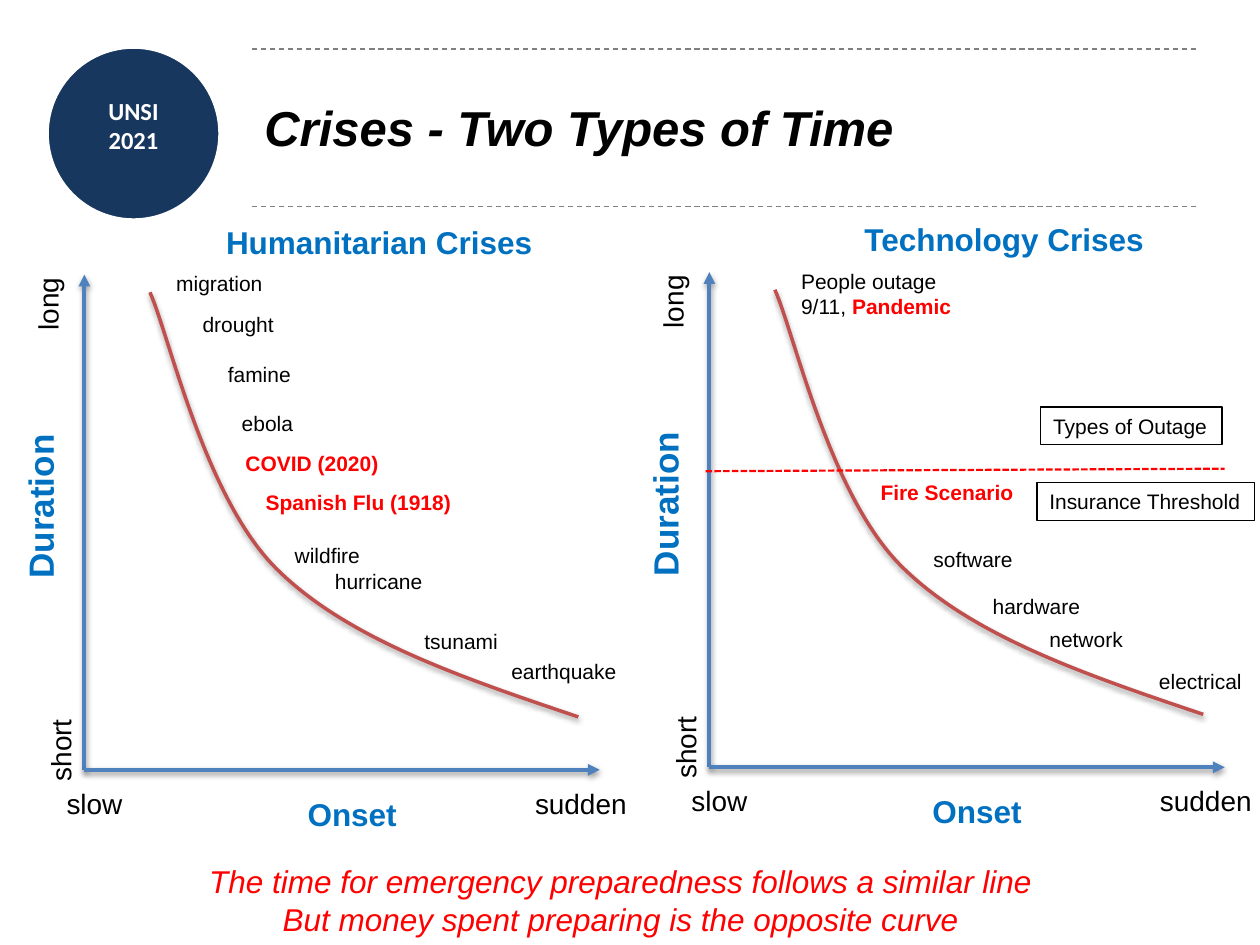
from dataclasses import dataclass

from lxml import etree
from pptx import Presentation
from pptx import util as u
from pptx.dml import color
from pptx.enum import dml, shapes, text
from pptx.oxml import ns, parse_xml

BLACK, RED, BLUE, WHITE = "000000", "FF0000", "0070C0", "FFFFFF"
LEFT, CENTER = text.PP_ALIGN.LEFT, text.PP_ALIGN.CENTER
DRAWING = 'xmlns:a="http://schemas.openxmlformats.org/drawingml/2006/main"'
SHADOW = (
    f'<a:effectLst {DRAWING}><a:outerShdw blurRad="40000" dist="20000" dir="5400000" '
    'rotWithShape="0"><a:srgbClr val="000000"><a:alpha val="38000"/></a:srgbClr>'
    "</a:outerShdw></a:effectLst>"
)
NO_SHADOW = f"<a:effectLst {DRAWING}/>"


@dataclass(frozen=True)
class Label:
    words: str
    left: float
    top: float
    width: float
    height: float = 0.3
    size: float = 12
    hue: str = BLACK
    bold: bool = False
    italic: bool = False
    align: text.PP_ALIGN = LEFT
    wrap: bool = False
    rotation: int = 0
    boxed: bool = False
    font: str = "Arial"


@dataclass(frozen=True)
class Panel:
    dx: float
    dy: float
    labels: tuple[Label, ...]


def axis_word(words: str, left: float, top: float, rotation: int = 0) -> Label:
    return Label(words, left, top, 1.26, 0.37, 16, align=CENTER, wrap=True, rotation=rotation)


def heading(words: str, left: float, top: float, width: float) -> Label:
    return Label(words, left, top, width, 0.4, 18, BLUE, True, align=CENTER)


def red_label(words: str, left: float, top: float, width: float) -> Label:
    return Label(words, left, top, width, hue=RED, bold=True)


AXIS_LABELS = (
    Label("Duration", -0.36, 3.79, 1.36, 0.44, 20, BLUE, True, rotation=270),
    heading("Onset", 1.77, 6.26, 2.05),
    axis_word("sudden", 3.98, 6.19),
    axis_word("slow", 0.12, 6.19),
    axis_word("short", -0.15, 5.77, 270),
    axis_word("long", -0.25, 2.23, 270),
)
HUMANITARIAN = Panel(0, 0, (
    Label("migration", 1.3, 2.1, 0.89),
    Label("drought", 1.51, 2.42, 0.77),
    Label("famine", 1.71, 2.82, 0.71),
    Label("ebola", 1.82, 3.21, 0.61),
    red_label("COVID (2020)", 1.85, 3.53, 1.27),
    red_label("Spanish Flu (1918)", 2.01, 3.84, 1.69),
    Label("wildfire", 2.24, 4.26, 0.72),
    Label("hurricane", 2.56, 4.46, 0.9),
    Label("tsunami", 3.27, 4.94, 0.79),
    Label("earthquake", 3.96, 5.18, 1.08),
    heading("Humanitarian Crises", 1.68, 1.72, 2.66),
))
TECHNOLOGY = Panel(4.96, -0.02, (
    Label("Types of Outage", 8.26, 3.23, 1.44, boxed=True),
    red_label("Fire Scenario", 6.89, 3.76, 1.27),
    Label("Insurance Threshold", 8.23, 3.83, 1.73, boxed=True),
    Label("software", 7.31, 4.29, 0.84),
    Label("hardware", 7.78, 4.66, 0.9),
    Label("network", 8.23, 4.92, 0.79),
    Label("electrical", 9.1, 5.26, 0.86),
    heading("Technology Crises", 6.75, 1.7, 2.44),
))
CURVE = ((4.59, 5.69), (3.67, 5.38), (2.75, 5.07), (2.19, 4.51),
         (1.62, 3.94), (1.34, 2.65), (1.19, 2.32))


def paint(target, hue: str) -> None:
    target.rgb = color.RGBColor.from_string(hue)


def set_line(line, hue: str, width: float) -> None:
    line.fill.solid()
    paint(line.fill.fore_color, hue)
    line.width = u.Pt(width)


def format_run(run, label: Label) -> None:
    run.font.name = label.font
    run.font.size = u.Pt(label.size)
    run.font.bold = label.bold
    run.font.italic = label.italic
    paint(run.font.color, label.hue)


def add_label(slide, label: Label, dx: float = 0, dy: float = 0):
    box = (u.Inches(label.left + dx), u.Inches(label.top + dy),
           u.Inches(label.width), u.Inches(label.height))
    if label.boxed:
        shape = slide.shapes.add_shape(shapes.MSO_SHAPE.RECTANGLE, *box)
        shape.shadow.inherit = False
        shape.fill.background()
        set_line(shape.line, BLACK, 0.75)
    else:
        shape = slide.shapes.add_textbox(*box)
    shape.rotation = label.rotation
    frame = shape.text_frame
    frame.text = label.words
    frame.word_wrap = label.wrap
    frame.auto_size = text.MSO_AUTO_SIZE.SHAPE_TO_FIT_TEXT
    for paragraph in frame.paragraphs:
        paragraph.alignment = label.align
        for run in paragraph.runs:
            format_run(run, label)
    return shape


def add_line(slide, start: tuple[float, float], end: tuple[float, float], hue: str,
             width: float, dash=None, arrow: bool = False) -> None:
    points = [u.Inches(value) for value in (*start, *end)]
    connector = slide.shapes.add_connector(shapes.MSO_CONNECTOR.STRAIGHT, *points)
    set_line(connector.line, hue, width)
    if dash is not None:
        connector.line.dash_style = dash
    if arrow:
        etree.SubElement(connector.line._get_or_add_ln(), ns.qn("a:headEnd"), type="triangle")
    connector._element.spPr.append(parse_xml(SHADOW if arrow else NO_SHADOW))


def add_curve(slide, dx: float, dy: float) -> None:
    points = [(u.Inches(x + dx), u.Inches(y + dy)) for x, y in CURVE]
    builder = slide.shapes.build_freeform(*points[0])
    builder.add_line_segments(points[1:], close=False)
    shape = builder.convert_to_shape()
    shape.fill.background()
    set_line(shape.line, "C0504D", 2)
    outline = shape._element.spPr.find(".//" + ns.qn("a:path"))
    segments = outline.findall(ns.qn("a:lnTo"))
    for first in range(0, len(segments), 3):
        bezier = etree.SubElement(outline, ns.qn("a:cubicBezTo"))
        for segment in segments[first:first + 3]:
            bezier.append(segment[0])
            outline.remove(segment)
    shape._element.spPr.append(parse_xml(SHADOW))


def add_panel(slide, panel: Panel) -> None:
    origin = (0.67 + panel.dx, 6.11 + panel.dy)
    for x, y in ((0.67, 2.18), (4.76, 6.11)):
        add_line(slide, (x + panel.dx, y + panel.dy), origin, "4F81BD", 2.25, arrow=True)
    add_curve(slide, panel.dx, panel.dy)
    for label in AXIS_LABELS:
        add_label(slide, label, panel.dx, panel.dy)
    for label in panel.labels:
        add_label(slide, label)


def add_header(slide) -> None:
    side = u.Inches(1.38)
    badge = slide.shapes.add_shape(
        shapes.MSO_SHAPE.OVAL, u.Inches(0.37), u.Inches(0.37), side, side)
    badge.shadow.inherit = False
    badge.fill.solid()
    paint(badge.fill.fore_color, "17375E")
    set_line(badge.line, WHITE, 2.5)
    frame = add_label(slide, Label("UNSI\n2021", 0.43, 0.76, 1.26, 0.47, 14, WHITE, True,
                                   align=CENTER, wrap=True, font="Calibri")).text_frame
    frame.margin_left = frame.margin_right = frame.margin_top = frame.margin_bottom = 0
    for y in (0.39, 1.64):
        add_line(slide, (2, y), (9.5, y), "808080", 0.75, dml.MSO_LINE.DASH)
    title = add_label(slide, Label("Crises - Two Types of Time", 2, 0.38, 7.5, 1.25, 28,
                                   bold=True, italic=True, wrap=True)).text_frame
    title.auto_size = text.MSO_AUTO_SIZE.NONE
    title.vertical_anchor = text.MSO_ANCHOR.MIDDLE


def main() -> None:
    presentation = Presentation()
    presentation.slide_width, presentation.slide_height = u.Inches(10), u.Inches(7.5)
    slide = presentation.slides.add_slide(presentation.slide_layouts[6])
    add_header(slide)
    for panel in (HUMANITARIAN, TECHNOLOGY):
        add_panel(slide, panel)
    outage = add_label(slide, Label("People outage\n9/11, ", 6.26, 2.08, 1.4, 0.5))
    pandemic = outage.text_frame.paragraphs[1].add_run()
    pandemic.text = "Pandemic"
    format_run(pandemic, red_label("Pandemic", 6.26, 2.08, 1.4))
    add_line(slide, (5.6, 3.74), (9.72, 3.72), RED, 1.25, dml.MSO_LINE.SQUARE_DOT)
    add_label(slide, Label("The time for emergency preparedness follows a similar line\n"
                           "But money spent preparing is the opposite curve",
                           1.4, 6.79, 7.05, 0.71, 18, RED, italic=True, align=CENTER))
    presentation.save("out.pptx")


if __name__ == "__main__":
    main()
